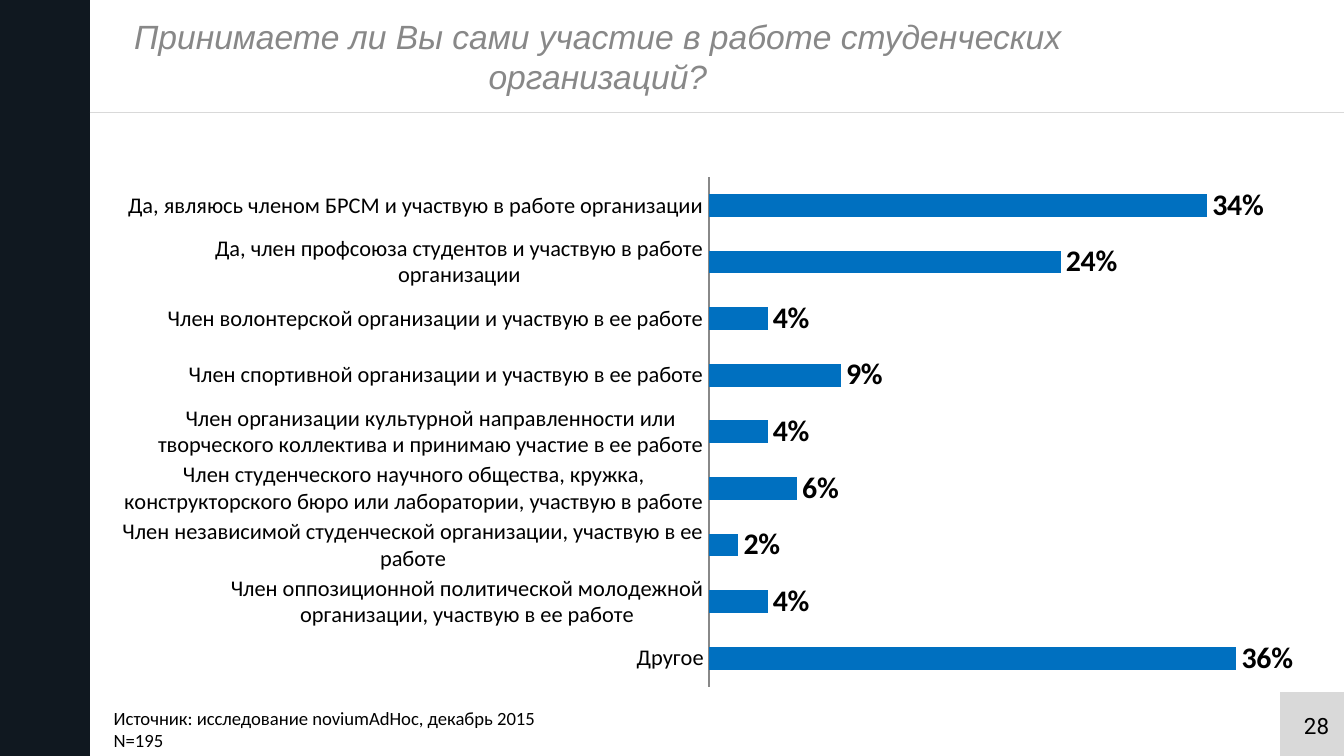
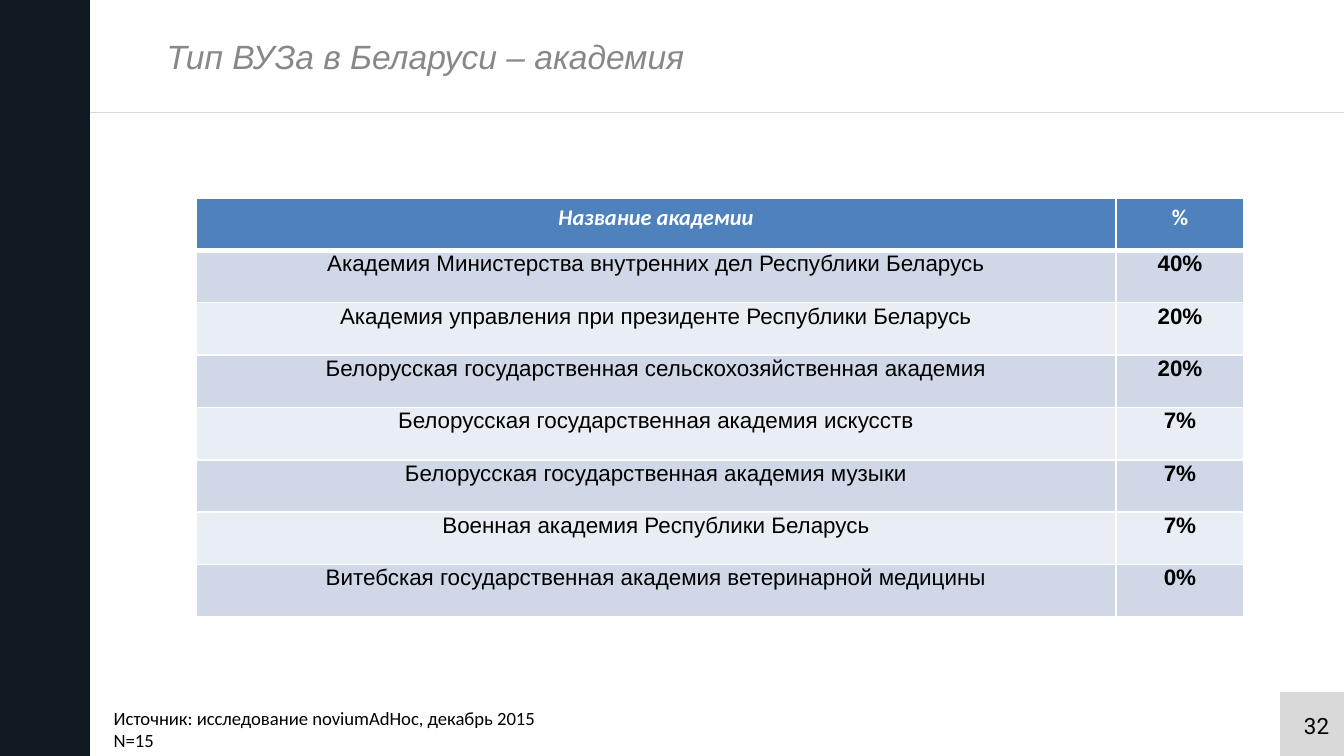
from pptx import Presentation
from pptx.chart.data import CategoryChartData
from pptx.dml.color import RGBColor
from pptx.enum.chart import XL_CHART_TYPE, XL_LABEL_POSITION, XL_TICK_MARK
from pptx.enum.shapes import MSO_CONNECTOR, MSO_SHAPE
from pptx.enum.text import MSO_ANCHOR, PP_ALIGN
from pptx.oxml import parse_xml
from pptx.oxml.ns import nsdecls, qn
from pptx.util import Cm, Pt

WIDE, HIGH = 25.4, 14.29
BAND, HEAD, TAB = 1.7, 2.13, 1.2
NAVY, PALE, GREY = "101820", "D9D9D9", "888888"
BLACK, WHITE, BLUE = "000000", "FFFFFF", "0070C0"
TOP, ODD, EVEN = "4F81BD", "D0D8E8", "E9EDF4"
SOURCE = "Источник: исследование noviumAdHoc, декабрь 2015"

ANSWERS = [
    ("Другое", 0.36),
    ("Член оппозиционной политической молодежной организации, "
     "участвую в ее работе", 0.04),
    ("Член независимой студенческой организации, участвую в ее работе", 0.02),
    ("Член студенческого научного общества, кружка, конструкторского бюро "
     "или лаборатории, участвую в работе", 0.06),
    ("Член организации культурной направленности или творческого коллектива "
     "и принимаю участие в ее работе", 0.04),
    ("Член спортивной организации и участвую в ее работе", 0.09),
    ("Член волонтерской организации и участвую в ее работе", 0.04),
    ("Да, член профсоюза студентов и участвую в работе организации", 0.24),
    ("Да, являюсь членом БРСМ и участвую в работе организации", 0.34),
]
SCHOOLS = [
    ("Название академии", "%"),
    ("Академия Министерства внутренних дел Республики Беларусь", "40%"),
    ("Академия управления при президенте Республики Беларусь", "20%"),
    ("Белорусская государственная сельскохозяйственная академия", "20%"),
    ("Белорусская государственная академия искусств", "7%"),
    ("Белорусская государственная академия музыки", "7%"),
    ("Военная академия Республики Беларусь", "7%"),
    ("Витебская государственная академия ветеринарной медицины", "0%"),
]


def tint(code):
    return RGBColor.from_string(code)


def style(font, name, size, color, bold=False, slant=False):
    font.name, font.size = name, Pt(size)
    font.bold, font.italic = bold, slant
    font.color.rgb = tint(color)


def place(box):
    return [Cm(part) for part in box]


def block(slide, kind, box, color):
    shape = slide.shapes.add_shape(kind, *place(box))
    shape.shadow.inherit = False
    shape.fill.solid()
    shape.fill.fore_color.rgb = tint(color)
    shape.line.fill.background()


def write(slide, box, lines, look, align=PP_ALIGN.LEFT, anchor=MSO_ANCHOR.TOP):
    frame = slide.shapes.add_textbox(*place(box)).text_frame
    frame.word_wrap = True
    frame.vertical_anchor = anchor
    frame.text = "\n".join(lines)
    for para in frame.paragraphs:
        para.alignment = align
        style(para.font, *look)


def base(deck, title, box, align, count, page):
    """Add a slide with the band, title, source note and page number."""
    slide = deck.slides.add_slide(deck.slide_layouts[6])
    block(slide, MSO_SHAPE.RECTANGLE, (0, 0, BAND, HIGH), NAVY)
    rule = slide.shapes.add_connector(
        MSO_CONNECTOR.STRAIGHT, *place((BAND, HEAD, WIDE, HEAD)))
    rule.line.color.rgb = tint(PALE)
    rule.line.width = Pt(0.5)
    rule._element.spPr.append(parse_xml(f"<a:effectLst {nsdecls('a')}/>"))

    left = WIDE - TAB
    block(slide, MSO_SHAPE.FLOWCHART_PROCESS,
          (left, HIGH - TAB, TAB, TAB), PALE)
    write(slide, (left, 13.34, 1.17, 1.07), [str(page)],
          ("Roboto", 12, BLACK), PP_ALIGN.RIGHT)
    write(slide, box, [title], ("Arial", 18, GREY, False, True),
          align, MSO_ANCHOR.MIDDLE)
    write(slide, (1.9, 13.23, 22.4, 1.12), [SOURCE, f"N={count}"],
          ("Calibri", 10, BLACK))
    return slide


def pin(chart, x, y, w, h):
    """Fix the inner plot area, in shares of the chart."""
    plot = chart._chartSpace.chart.plotArea
    for old in plot.findall(qn("c:layout")):
        plot.remove(old)
    sizes = "".join(f'<c:{tag} val="{val}"/>' for tag, val in
                    zip("xywh", (x, y, w, h)))
    plot.insert(0, parse_xml(
        f'<c:layout {nsdecls("c")}><c:manualLayout>'
        '<c:layoutTarget val="inner"/><c:xMode val="edge"/>'
        f'<c:yMode val="edge"/>{sizes}</c:manualLayout></c:layout>'))


def bars(slide, box, rows):
    data = CategoryChartData(number_format="####%")
    data.categories = [name for name, _ in rows]
    data.add_series("Series 1", [share for _, share in rows])
    chart = slide.shapes.add_chart(
        XL_CHART_TYPE.BAR_CLUSTERED, *place(box), data).chart
    chart.has_title = chart.has_legend = False
    style(chart.font, "Calibri", 16, BLACK)
    pin(chart, 0.5, 0.09, 0.49, 0.86)

    names = chart.category_axis
    names.major_tick_mark = names.minor_tick_mark = XL_TICK_MARK.NONE
    names.format.line.color.rgb = tint(GREY)
    style(names.tick_labels.font, "Calibri", 12, BLACK)
    scale = chart.value_axis
    scale.visible = scale.has_major_gridlines = False
    scale.minimum_scale, scale.maximum_scale = 0, 0.4

    plot = chart.plots[0]
    plot.gap_width, plot.overlap = 150, -25
    plot.vary_by_categories = False
    fill = plot.series[0].format.fill
    fill.solid()
    fill.fore_color.rgb = tint(BLUE)
    plot.has_data_labels = True
    labels = plot.data_labels
    labels.show_value = True
    labels.number_format = "####%"
    labels.number_format_is_linked = False
    labels.position = XL_LABEL_POSITION.OUTSIDE_END
    style(labels.font, "Calibri", 16, BLACK, True)


def edge(cell, side, width):
    cell._tc.get_or_add_tcPr().append(parse_xml(
        f'<a:ln{side} {nsdecls("a")} w="{Pt(width)}"><a:solidFill>'
        f'<a:srgbClr val="{WHITE}"/></a:solidFill></a:ln{side}>'))


def paint(cell, text, row, col):
    head = row == 0
    for side in "LRTB":
        thick = (head and side == "B") or (row == 1 and side == "T")
        edge(cell, side, 3 if thick else 1)
    cell.fill.solid()
    cell.fill.fore_color.rgb = tint(TOP if head else ODD if row % 2 else EVEN)
    cell.text = text
    para = cell.text_frame.paragraphs[0]
    para.alignment = PP_ALIGN.CENTER
    if head:
        style(para.font, "Calibri", 12, WHITE, True, col == 0)
    else:
        cell.margin_left = cell.margin_right = cell.margin_top = Cm(0.02)
        cell.margin_bottom = 0
        style(para.font, "Arial", 12, BLACK, col == 1)


def grid(slide, box, rows, share):
    """Add a two-column table; share is the width of the last column."""
    table = slide.shapes.add_table(len(rows), 2, *place(box)).table
    wide, high = box[2:]
    table.columns[0].width = Cm(wide - share)
    table.columns[1].width = Cm(share)
    for row, pair in enumerate(rows):
        table.rows[row].height = Cm(high / len(rows))
        for col, text in enumerate(pair):
            paint(table.cell(row, col), text, row, col)


def main():
    deck = Presentation()
    deck.slide_width, deck.slide_height = Cm(WIDE), Cm(HIGH)
    slide = base(
        deck, "Принимаете ли Вы сами участие в работе студенческих организаций?",
        (1.3, 0, 20, HEAD), PP_ALIGN.CENTER, 195, 28)
    bars(slide, (2.1, 2.34, 22.6, 11.2), ANSWERS)
    slide = base(deck, "Тип ВУЗа в Беларуси – академия",
                 (2.9, 0, 18, HEAD), PP_ALIGN.LEFT, 15, 32)
    grid(slide, (3.71, 3.74, 19.8, 7.92), SCHOOLS, 2.42)
    deck.save("out.pptx")


if __name__ == "__main__":
    main()
